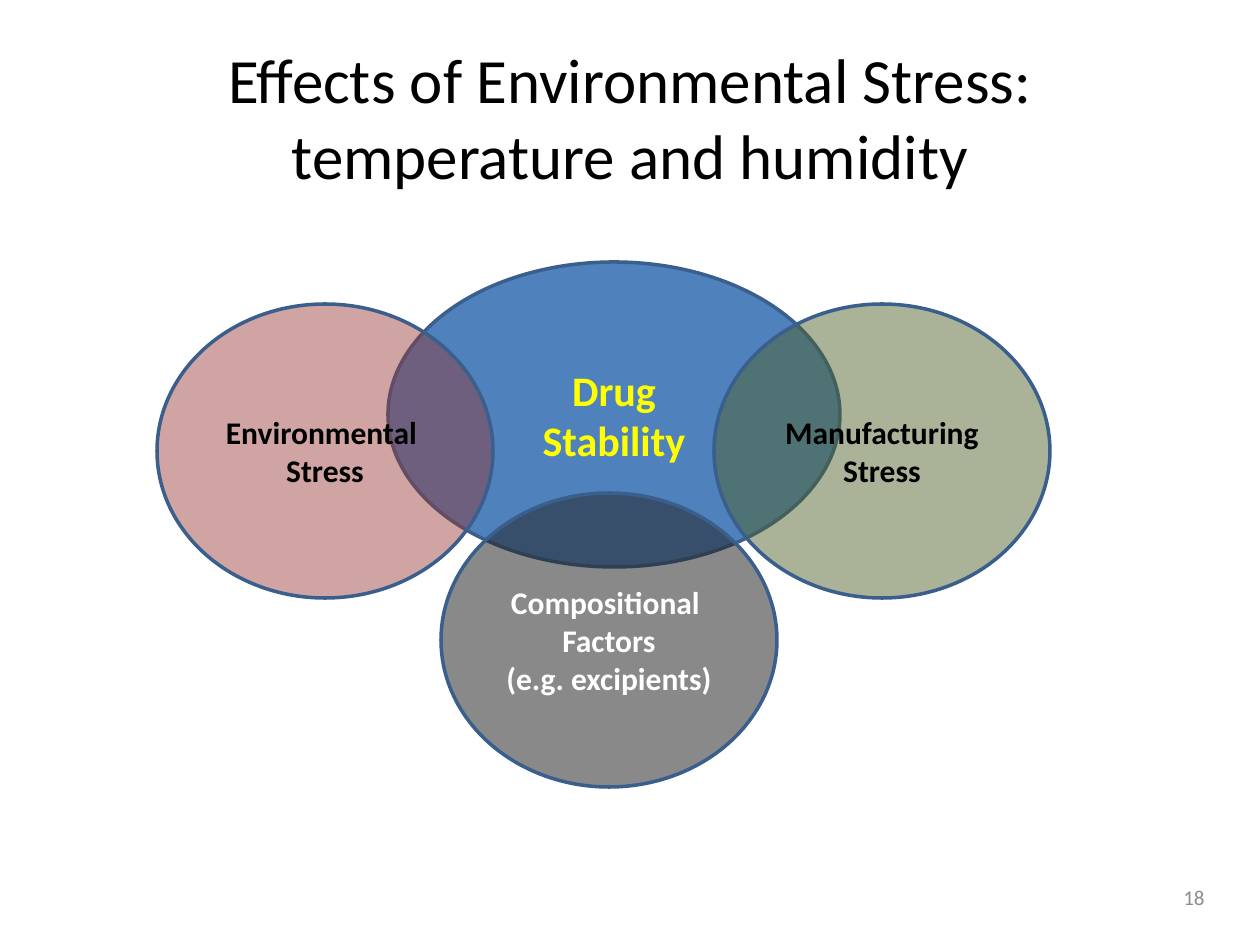
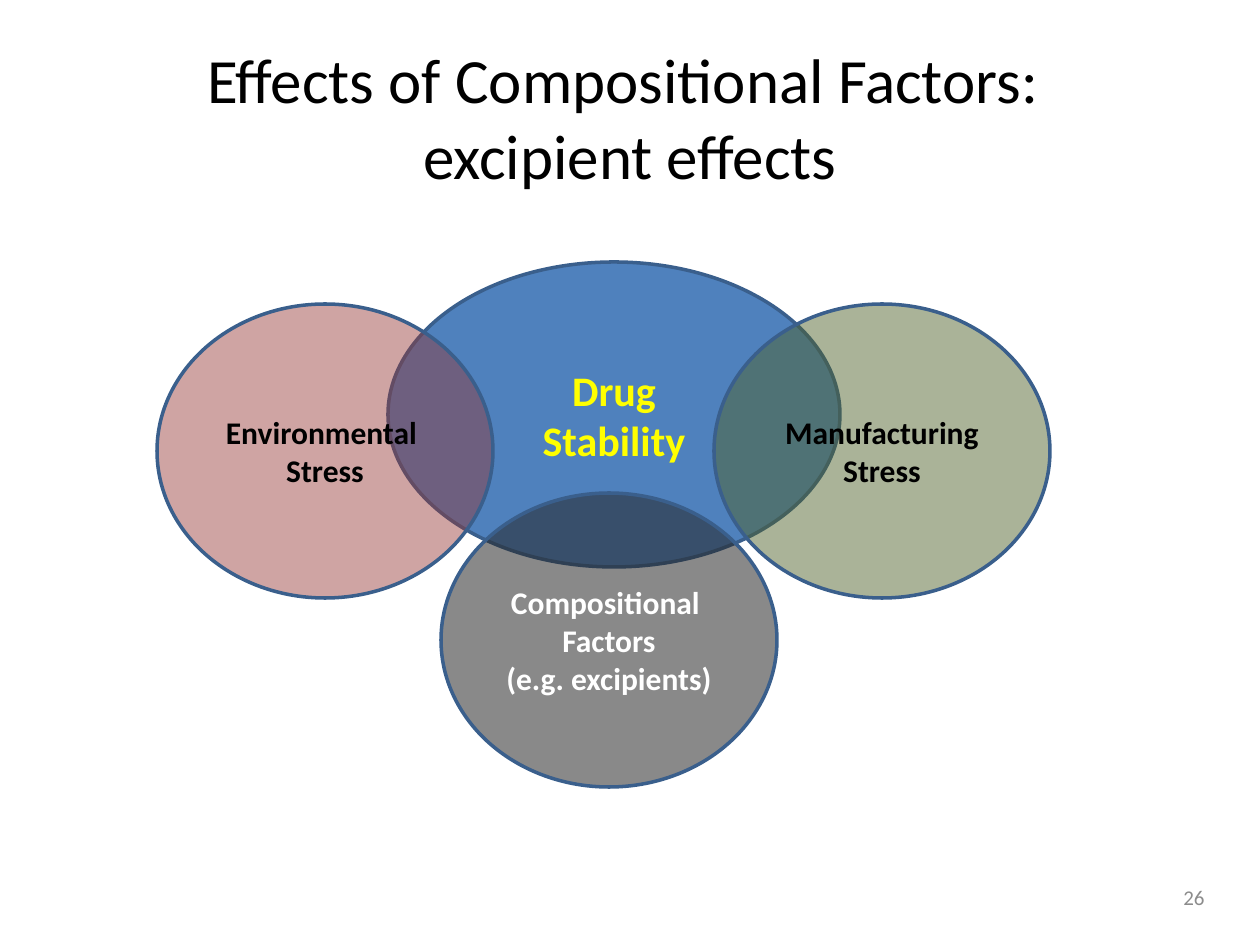
from pptx import Presentation
from pptx.dml.color import RGBColor as RGB
from pptx.enum.shapes import MSO_SHAPE as Kind
from pptx.enum.text import MSO_ANCHOR as Anchor, MSO_AUTO_SIZE as Fit, PP_ALIGN as Align
from pptx.oxml.ns import qn
from pptx.util import Emu, Pt
from lxml.etree import SubElement as Sub

FONT = "Calibri"
BLACK = RGB(0x00, 0x00, 0x00)
WHITE = RGB(0xFF, 0xFF, 0xFF)
YELLOW = RGB(0xFF, 0xFF, 0x00)
GREY = RGB(0x8C, 0x8C, 0x8C)
BLUE = RGB(0x4F, 0x81, 0xBD)
EDGE = RGB(0x3A, 0x5F, 0x8C)
DARK = RGB(0x26, 0x26, 0x26)
RED = RGB(0x95, 0x37, 0x35)
GREEN = RGB(0x4F, 0x62, 0x28)

FACTOR = (336, 294)
OVALS = [
    ((388, 262), (452, 305), BLUE, 100, ["Drug", "Stability"], 24, YELLOW),
    ((441, 493), FACTOR, DARK, 54,
     ["Compositional ", "Factors", "(e.g. excipients)"], 18, WHITE),
    ((157, 304), FACTOR, RED, 45, ["Environmental ", "Stress"], 18, BLACK),
    ((714, 304), FACTOR, GREEN, 48, ["Manufacturing", "Stress"], 18, BLACK),
]
SLIDES = [
    ("Effects of Environmental Stress: temperature and humidity", "18"),
    ("Effects of Compositional Factors: \vexcipient effects", "26"),
]


def px(*nums):
    return [Emu(round(num * 914400 / 126)) for num in nums]


def write(frame, text, size, color, align=Align.CENTER, bold=False):
    frame.text = text
    frame.word_wrap = True
    frame.auto_size = Fit.NONE
    frame.vertical_anchor = Anchor.MIDDLE
    for para in frame.paragraphs:
        para.alignment = align
        font = para.font
        font.name, font.size, font.bold = FONT, Pt(size), bold
        font.color.rgb = color


def add_title(slide, text):
    title = slide.shapes.title
    title.left, title.top, title.width, title.height = px(63, 38, 1134, 157)
    write(title.text_frame, text, 36, BLACK)


def add_number(slide, text):
    box = slide.shapes.add_textbox(*px(924, 872, 293, 50))
    write(box.text_frame, text, 12, GREY, Align.RIGHT)


def add_oval(group, spot, size, fill, alpha, lines, points, color):
    oval = group.shapes.add_shape(Kind.OVAL, *px(*spot, *size))
    oval.shadow.inherit = False
    oval.fill.solid()
    oval.fill.fore_color.rgb = fill
    if alpha < 100:
        tint = oval.fill._xPr.find(qn("a:solidFill"))[0]
        Sub(tint, qn("a:alpha"), val=str(alpha * 1000))
    oval.line.color.rgb = EDGE
    oval.line.width = Pt(2)
    write(oval.text_frame, "\n".join(lines), points, color, bold=True)


def add_venn(slide):
    group = slide.shapes.add_group_shape()
    for oval in OVALS:
        add_oval(group, *oval)


def main():
    deck = Presentation()
    deck.slide_width, deck.slide_height = px(1260, 945)
    for title, number in SLIDES:
        slide = deck.slides.add_slide(deck.slide_layouts[5])
        add_title(slide, title)
        add_number(slide, number)
        add_venn(slide)
    deck.save("out.pptx")


if __name__ == "__main__":
    main()
